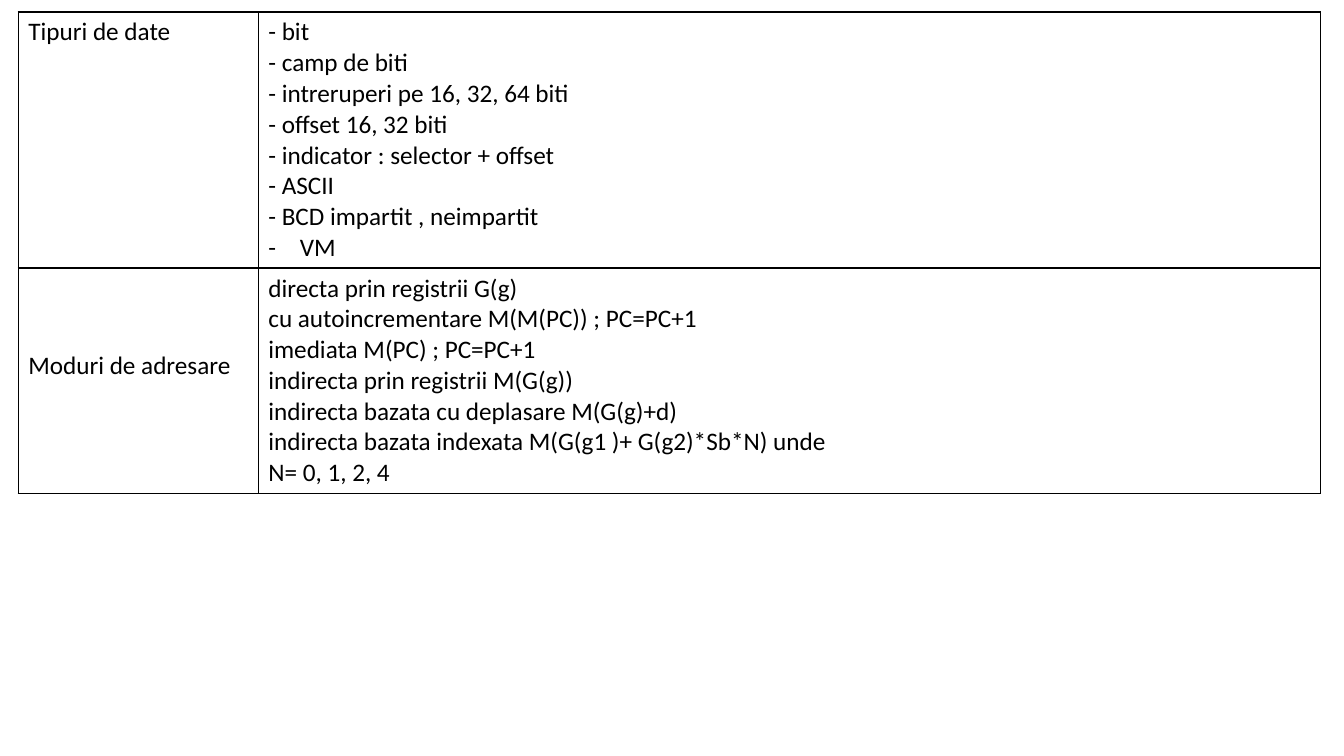
import pptx
import pptx.dml.color
import pptx.enum.text
import pptx.oxml
import pptx.oxml.ns
import pptx.util

Pt = pptx.util.Pt
MIDDLE = pptx.enum.text.MSO_ANCHOR.MIDDLE
TOP = pptx.enum.text.MSO_ANCHOR.TOP


def rgb(value):
    return pptx.dml.color.RGBColor.from_string(value)


class SlideWriter:
    font = "Calibri"
    size = 18
    ink = "000000"
    border_width = 1

    def __init__(self, slide):
        self.slide = slide

    def table(self, left, top, widths, heights):
        frame = self.slide.shapes.add_table(
            len(heights), len(widths), Pt(left), Pt(top), Pt(sum(widths)), Pt(sum(heights)))
        table = frame.table
        table.first_row = table.horz_banding = False
        for column, width in zip(table.columns, widths):
            column.width = Pt(width)
        for row, height in zip(table.rows, heights):
            row.height = Pt(height)
        return table

    def cell(self, cell, lines, anchor=MIDDLE):
        cell.text_frame.text = "\n".join(lines)
        cell.vertical_anchor = anchor
        cell.fill.background()
        self.borders(cell)
        for paragraph in cell.text_frame.paragraphs:
            for run in paragraph.runs:
                run.font.name = self.font
                run.font.size = Pt(self.size)
                run.font.color.rgb = rgb(self.ink)

    def borders(self, cell):
        properties = cell._tc.get_or_add_tcPr()
        for position, side in enumerate(("lnL", "lnR", "lnT", "lnB")):
            properties.insert(position, pptx.oxml.parse_xml(
                f'<a:{side} {pptx.oxml.ns.nsdecls("a")} w="{Pt(self.border_width)}">'
                f'<a:solidFill><a:srgbClr val="{self.ink}"/></a:solidFill></a:{side}>'))

    def bullet(self, paragraph, mark, indent):
        properties = paragraph._p.get_or_add_pPr()
        properties.set("marL", str(Pt(indent)))
        properties.set("indent", str(-Pt(indent)))
        for tag, attribute, value in (("buFont", "typeface", self.font), ("buChar", "char", mark)):
            properties.append(pptx.oxml.parse_xml(
                f'<a:{tag} {pptx.oxml.ns.nsdecls("a")} {attribute}="{value}"/>'))


def main():
    presentation = pptx.Presentation()
    presentation.slide_width = Pt(960)
    presentation.slide_height = Pt(540)
    writer = SlideWriter(presentation.slides.add_slide(presentation.slide_layouts[6]))

    data_types = [
        "- bit",
        "- camp de biti",
        "- intreruperi pe 16, 32, 64 biti",
        "- offset 16, 32 biti",
        "- indicator : selector + offset",
        "- ASCII",
        "- BCD impartit , neimpartit",
        "VM",
    ]
    addressing_modes = [
        "directa prin registrii G(g)",
        "cu autoincrementare M(M(PC)) ; PC=PC+1",
        "imediata M(PC) ; PC=PC+1",
        "indirecta prin registrii M(G(g))",
        "indirecta bazata cu deplasare M(G(g)+d)",
        "indirecta bazata indexata M(G(g1 )+ G(g2)*Sb*N) unde",
        "N= 0, 1, 2, 4",
    ]

    features = writer.table(13, 8.5, [171.5, 758.5], [182.5, 161])
    writer.cell(features.cell(0, 0), ["Tipuri de date"], TOP)
    writer.cell(features.cell(0, 1), data_types)
    writer.bullet(features.cell(0, 1).text_frame.paragraphs[-1], "-", 22.5)
    writer.cell(features.cell(1, 0), ["Moduri de adresare"])
    features.cell(1, 0).margin_bottom = Pt(25.6)
    writer.cell(features.cell(1, 1), addressing_modes)

    presentation.save("out.pptx")


if __name__ == "__main__":
    main()
